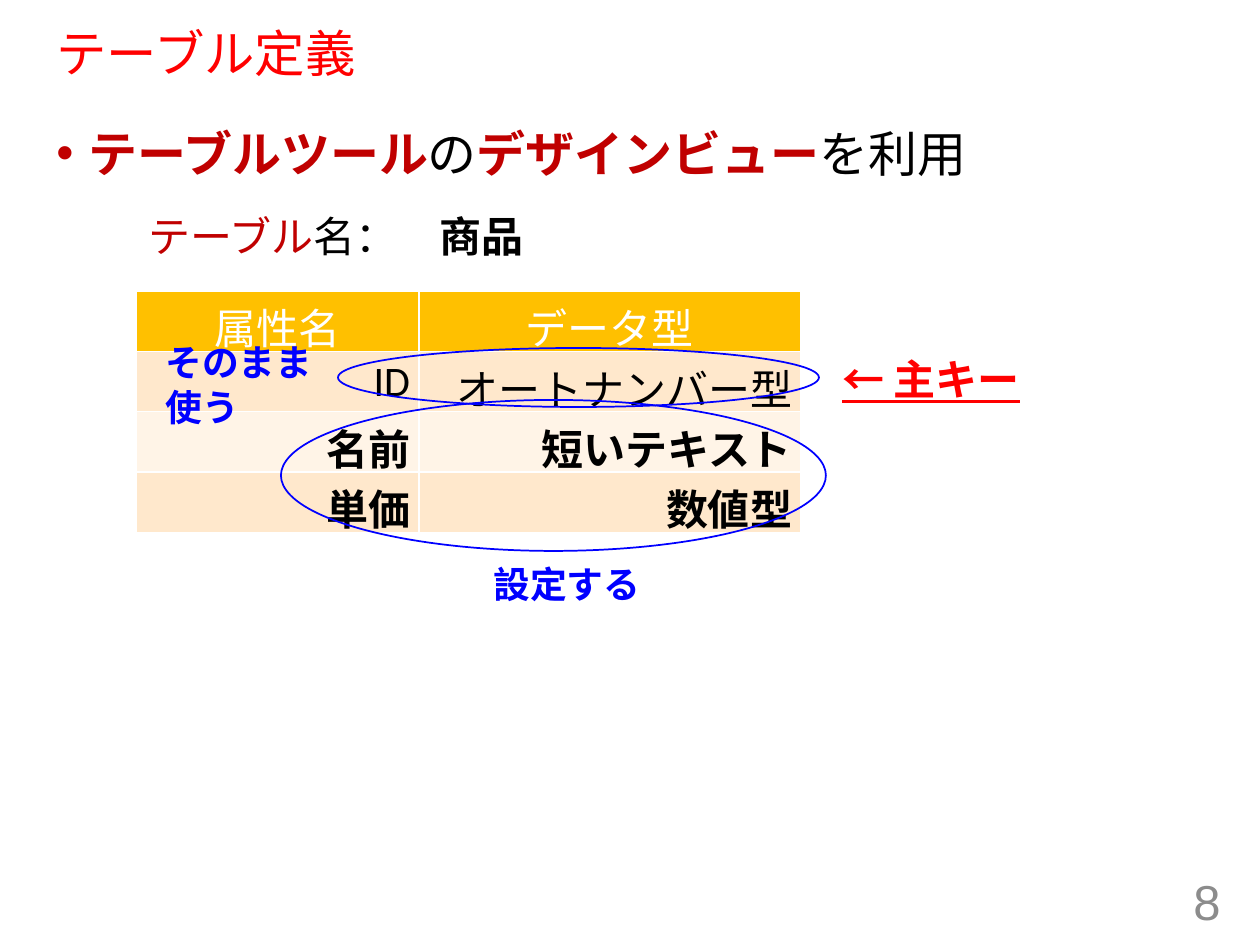
"""Build the table definition slide."""
from lxml import etree
from pptx import Presentation
from pptx.dml.color import RGBColor
from pptx.enum.shapes import MSO_SHAPE
from pptx.enum.text import MSO_ANCHOR, MSO_AUTO_SIZE, PP_ALIGN
from pptx.oxml.ns import qn
from pptx.util import Pt

PX = 914400 // 126
LEFT, CENTER, RIGHT = PP_ALIGN.LEFT, PP_ALIGN.CENTER, PP_ALIGN.RIGHT
TOP, MIDDLE = MSO_ANCHOR.TOP, MSO_ANCHOR.MIDDLE
GROW = MSO_AUTO_SIZE.SHAPE_TO_FIT_TEXT
COLORS = {
    "red": "FF0000", "dark_red": "C00000", "black": "000000", "blue": "0000FF",
    "gray": "8C8C8C", "white": "FFFFFF", "header": "FFC000",
    "band_dark": "FFE8CC", "band_light": "FFF4E7",
}

TITLE = [[("テーブル定義", "red", False)]]
BODY = [[("テーブルツール", "dark_red", True), ("の", "black", False),
         ("デザインビュー", "dark_red", True), ("を利用", "black", False)]]
PAGE = [[("8", "gray", False)]]

TABLE_BOX = (136, 291)
COL_WIDTHS = (283, 382)
ROW_HEIGHT = 60
ROWS = [
    ("属性名", "データ型"),
    ("ID", "オートナンバー型"),
    ("名前", "短いテキスト"),
    ("単価", "数値型"),
]
ROW_STYLES = [
    ("header", "white", False, CENTER),
    ("band_dark", "black", False, RIGHT),
    ("band_light", "black", True, RIGHT),
    ("band_dark", "black", True, RIGHT),
]

ELLIPSES = [(338, 348, 481, 59), (281, 400, 545, 151)]
KEY_NOTE = ((830, 347, 494, 63), 24, [[("← 主キー", "red", True)]])
LABELS = [
    ((481, 556, 174, 57), 21, [[("設定する", "blue", True)]]),
    ((153, 334, 174, 102), 21, [[("そのまま", "blue", True)], [("使う", "blue", True)]]),
    ((136, 204, 407, 63), 24, [[("テーブル", "dark_red", False), ("名：　", "black", False),
                                ("商品", "black", True)]]),
]


def rgb(name):
    return RGBColor.from_string(COLORS[name])


def emu(box):
    return [v * PX for v in box]


def write(tf, paragraphs, size, font, align=LEFT):
    for i, runs in enumerate(paragraphs):
        p = tf.add_paragraph() if i else tf.paragraphs[0]
        p.alignment = align
        for text, color, bold in runs:
            r = p.add_run()
            r.text = text
            r.font.size = Pt(size)
            r.font.name = font
            r.font.bold = bold
            r.font.color.rgb = rgb(color)


def add_text(slide, box, size, paragraphs, font="Calibri", align=LEFT, anchor=TOP, wrap=True):
    tf = slide.shapes.add_textbox(*emu(box)).text_frame
    tf.word_wrap = wrap
    tf.vertical_anchor = anchor
    write(tf, paragraphs, size, font, align)
    return tf


def add_bullet(p):
    pPr = p._p.get_or_add_pPr()
    pPr.set("marL", str(32 * PX))
    pPr.set("indent", str(-32 * PX))
    etree.SubElement(pPr, qn("a:buFont")).set("typeface", "Arial")
    etree.SubElement(pPr, qn("a:buChar")).set("char", "•")


def add_definition_table(slide):
    size = (sum(COL_WIDTHS), ROW_HEIGHT * len(ROWS))
    table = slide.shapes.add_table(len(ROWS), len(COL_WIDTHS), *emu(TABLE_BOX + size)).table
    for col, width in zip(table.columns, COL_WIDTHS):
        col.width = width * PX
    for row, texts, (fill, color, bold, align) in zip(table.rows, ROWS, ROW_STYLES):
        row.height = ROW_HEIGHT * PX
        for cell, text in zip(row.cells, texts):
            cell.fill.solid()
            cell.fill.fore_color.rgb = rgb(fill)
            cell.margin_left = cell.margin_right = 9 * PX
            cell.margin_top = cell.margin_bottom = 5 * PX
            write(cell.text_frame, [[(text, color, bold)]], 24, "Calibri", align)


def add_ellipse(slide, box):
    sp = slide.shapes.add_shape(MSO_SHAPE.OVAL, *emu(box))
    sp.shadow.inherit = False
    sp.fill.background()
    sp.line.color.rgb = rgb("blue")
    sp.line.width = Pt(1)


def main():
    prs = Presentation()
    prs.slide_width, prs.slide_height = emu((1260, 945))
    slide = prs.slides.add_slide(prs.slide_layouts[6])

    title = add_text(slide, (44, 24, 1166, 64), 28.8, TITLE, "Arial", anchor=MIDDLE)
    title.paragraphs[0].line_spacing = 0.9
    body = add_text(slide, (44, 117, 1166, 93), 28, BODY, "Arial")
    body.paragraphs[0].space_before = Pt(10)
    add_bullet(body.paragraphs[0])
    add_text(slide, (949, 876, 284, 50), 28, PAGE, "Arial", RIGHT, MIDDLE)

    add_definition_table(slide)
    key = add_text(slide, *KEY_NOTE)
    key.auto_size = GROW
    key.paragraphs[0].runs[0].font.underline = True
    for box in ELLIPSES:
        add_ellipse(slide, box)
    for label in LABELS:
        add_text(slide, *label, wrap=False).auto_size = GROW

    prs.save("out.pptx")


if __name__ == "__main__":
    main()
